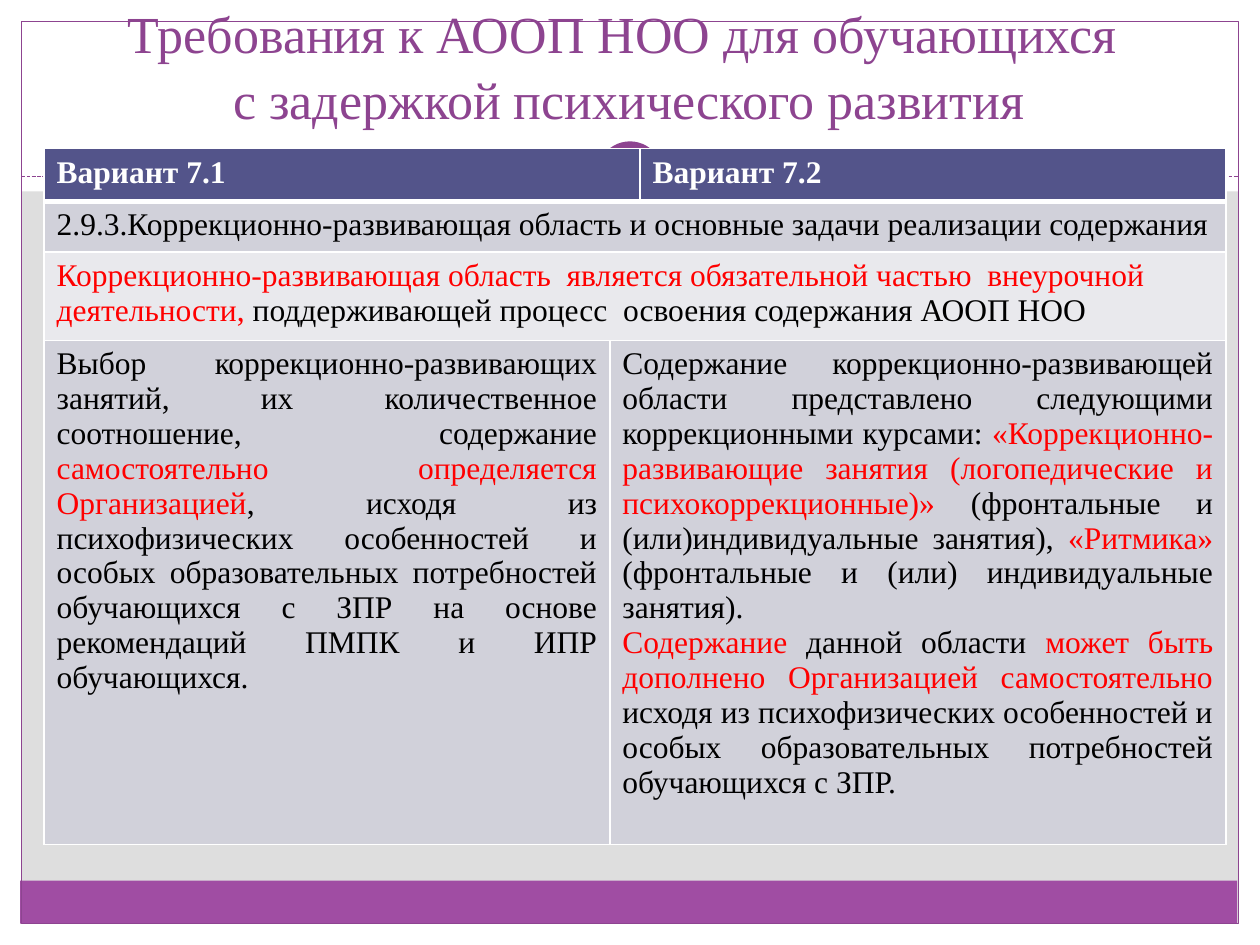
import pptx
import pptx.util
import pptx.dml.color
import pptx.enum.dml
import pptx.enum.shapes
import pptx.enum.text
import pptx.oxml
import pptx.oxml.ns
from pptx.util import Inches

RGBColor = pptx.dml.color.RGBColor
ALIGN = pptx.enum.text.PP_ALIGN
ANCHOR = pptx.enum.text.MSO_ANCHOR
SHAPE = pptx.enum.shapes.MSO_SHAPE

WHITE = RGBColor(0xFF, 0xFF, 0xFF)
BLACK = RGBColor(0, 0, 0)
RED = RGBColor(0xFF, 0, 0)
GREY = RGBColor(0xDE, 0xDE, 0xDE)
PLUM = RGBColor(0x8D, 0x44, 0x90)
BAND = RGBColor(0xA0, 0x4D, 0xA3)
NAVY = RGBColor(0x53, 0x54, 0x8A)
DARK = RGBColor(0xD1, 0xD1, 0xDA)
PALE = RGBColor(0xE9, 0xE9, 0xED)


def write(para, text, size=18, color=BLACK, bold=False, font="Times New Roman"):
    """Add text to a paragraph; each newline becomes a line break."""
    for i, line in enumerate(text.split("\n")):
        if i:
            para.add_line_break()
        run = para.add_run()
        run.text = line
        run.font.name = font
        run.font.size = pptx.util.Pt(size)
        run.font.bold = bold
        run.font.color.rgb = color


class Deck:
    def __init__(self, wide, high):
        self.prs = pptx.Presentation()
        self.prs.slide_width, self.prs.slide_height = Inches(wide), Inches(high)
        self.slide = self.prs.slides.add_slide(self.prs.slide_layouts[6])
        self.shapes = self.slide.shapes

    def ground(self, color):
        fill = self.slide.background.fill
        fill.solid()
        fill.fore_color.rgb = color

    def shape(self, kind, box, fill=None, line=None, width=0.75):
        item = self.shapes.add_shape(kind, *map(Inches, box))
        item.shadow.inherit = False
        if fill is None:
            item.fill.background()
        else:
            item.fill.solid()
            item.fill.fore_color.rgb = fill
        if line is None:
            item.line.fill.background()
        else:
            item.line.color.rgb = line
            item.line.width = pptx.util.Pt(width)

    def rule(self, start, end, color):
        line = self.shapes.add_connector(
            pptx.enum.shapes.MSO_CONNECTOR.STRAIGHT, *map(Inches, start + end))
        line.line.color.rgb = color
        line.line.width = pptx.util.Pt(0.75)
        line.line.dash_style = pptx.enum.dml.MSO_LINE.SQUARE_DOT
        props = line._element.spPr
        props.find(pptx.oxml.ns.qn("a:ln")).find(
            pptx.oxml.ns.qn("a:prstDash")).set("val", "sysDash")
        props.append(pptx.oxml.parse_xml(
            "<a:effectLst %s/>" % pptx.oxml.ns.nsdecls("a")))

    def title(self, box, text, **style):
        frame = self.shapes.add_textbox(*map(Inches, box)).text_frame
        frame.word_wrap = True
        frame.vertical_anchor = ANCHOR.BOTTOM
        para = frame.paragraphs[0]
        para.alignment = ALIGN.CENTER
        para.line_spacing = 1.05
        write(para, text, **style)

    def table(self, box, cols, rows):
        grid = self.shapes.add_table(len(rows), len(cols), *map(Inches, box)).table
        grid.first_row = grid.horz_banding = False
        for col, wide in zip(grid.columns, cols):
            col.width = Inches(wide)
        for r, (high, fill) in enumerate(rows):
            grid.rows[r].height = Inches(high)
            for c in range(len(cols)):
                cell = grid.cell(r, c)
                # Borders come before the fill in the cell properties
                self.edges(cell, top=3 if r == 1 else 1, bottom=3 if r == 0 else 1)
                cell.fill.solid()
                cell.fill.fore_color.rgb = fill
        return grid

    def edges(self, cell, top, bottom):
        props = cell._tc.get_or_add_tcPr()
        for side, width in (("L", 1), ("R", 1), ("T", top), ("B", bottom)):
            props.append(pptx.oxml.parse_xml(
                '<a:ln%s %s w="%d"><a:solidFill><a:srgbClr val="%s"/></a:solidFill>'
                "</a:ln%s>" % (side, pptx.oxml.ns.nsdecls("a"),
                               pptx.util.Pt(width), WHITE, side)))

    def cell(self, grid, row, first, last, paras, align=ALIGN.LEFT, bold=False):
        cell = grid.cell(row, first)
        if last > first:
            cell.merge(grid.cell(row, last))
        frame = cell.text_frame
        for i, runs in enumerate(paras):
            para = frame.add_paragraph() if i else frame.paragraphs[0]
            para.alignment = align
            for text, color in runs:
                write(para, text, color=color, bold=bold)


def main():
    deck = Deck(10, 7.5)

    # Backdrop: white margins, bottom band, frame, rule and ring
    deck.ground(GREY)
    for box in ((0, 7.33, 10, 0.17), (0, 0, 10, 1.52),
                (0, 0, 0.17, 7.5), (9.83, 0, 0.17, 7.5)):
        deck.shape(SHAPE.RECTANGLE, box, fill=WHITE)
    deck.shape(SHAPE.RECTANGLE, (0.16, 6.99, 9.66, 0.34), fill=BAND)
    deck.shape(SHAPE.RECTANGLE, (0.17, 0.17, 9.66, 7.16), line=PLUM)
    deck.rule((0.17, 1.4), (9.83, 1.4), PLUM)
    deck.shape(SHAPE.OVAL, (4.67, 1.05, 0.67, 0.67), fill=WHITE)
    deck.shape(SHAPE.OVAL, (4.77, 1.15, 0.46, 0.46), fill=WHITE, line=PLUM, width=4)

    # Title
    deck.title((0.33, 0, 9.33, 1.08),
               "Требования к АООП НОО для обучающихся \n"
               "с задержкой психического развития", size=29.7, color=PLUM)

    # Table: the narrow middle column shifts the split between rows
    rows = [(0.42, NAVY), (0.39, DARK), (0.63, PALE), (3.69, DARK)]
    grid = deck.table((0.35, 1.18, 9.3, 5.13), (4.49, 0.16, 4.65), rows)
    deck.cell(grid, 0, 0, 1, [[("Вариант 7.1", WHITE)]], bold=True)
    deck.cell(grid, 0, 2, 2, [[("Вариант 7.2", WHITE)]], bold=True)
    deck.cell(grid, 1, 0, 2, [[
        ("2.9.3.Коррекционно-развивающая область и основные задачи "
         "реализации содержания", BLACK)]])
    deck.cell(grid, 2, 0, 2, [[
        ("Коррекционно-развивающая область  является обязательной частью  "
         "внеурочной деятельности,", RED),
        (" поддерживающей процесс  освоения содержания АООП НОО", BLACK)]])
    deck.cell(grid, 3, 0, 0, [[
        ("Выбор коррекционно-развивающих занятий, их количественное "
         "соотношение, содержание ", BLACK),
        ("самостоятельно определяется Организацией", RED),
        (", исходя из психофизических особенностей и особых образовательных "
         "потребностей обучающихся с ЗПР на основе рекомендаций ПМПК и ИПР "
         "обучающихся.", BLACK)]], align=ALIGN.JUSTIFY)
    deck.cell(grid, 3, 1, 2, [
        [("Содержание коррекционно-развивающей области представлено следующими "
          "коррекционными курсами: ", BLACK),
         ("«Коррекционно-развивающие занятия (логопедические и "
          "психокоррекционные)» ", RED),
         ("(фронтальные и (или)индивидуальные занятия), ", BLACK),
         ("«Ритмика» ", RED),
         ("(фронтальные и (или) индивидуальные занятия).", BLACK)],
        [("Содержание", RED),
         (" данной области ", BLACK),
         ("может быть дополнено Организацией самостоятельно ", RED),
         ("исходя из психофизических особенностей и особых образовательных "
          "потребностей обучающихся с ЗПР. ", BLACK)]], align=ALIGN.JUSTIFY)

    deck.prs.save("out.pptx")


if __name__ == "__main__":
    main()
